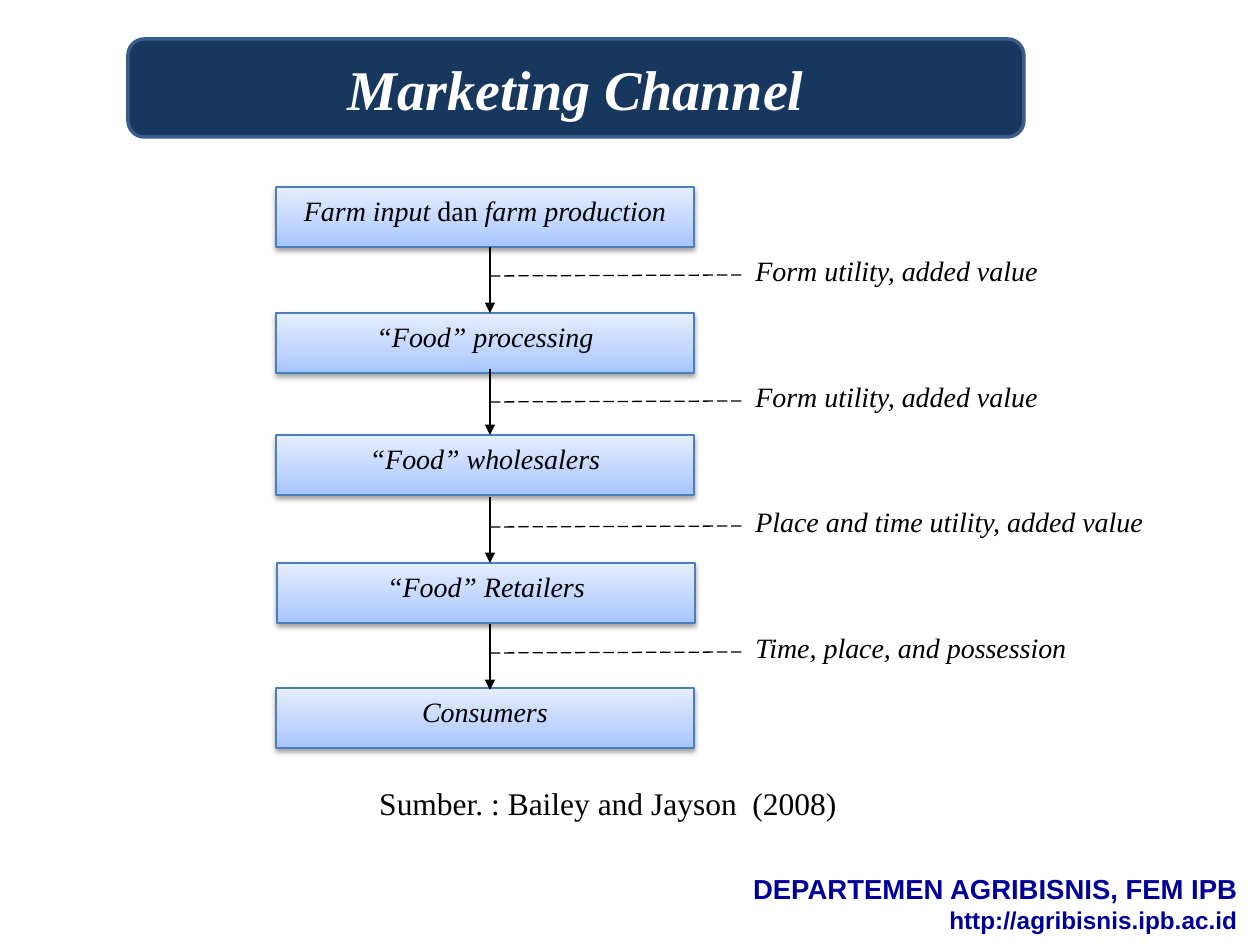
from copy import deepcopy

from lxml.etree import SubElement
from pptx import Presentation
from pptx.dml.color import RGBColor
from pptx.enum.dml import MSO_LINE
from pptx.enum.shapes import MSO_CONNECTOR, MSO_SHAPE
from pptx.enum.text import MSO_ANCHOR, PP_ALIGN
from pptx.oxml.ns import qn
from pptx.util import Emu, Pt

COLORS = {
    "ink": "000000",
    "white": "FFFFFF",
    "navy": "17375E",
    "navy_edge": "385D8A",
    "box_edge": "4B7EBC",
    "footer": "000099",
}
BOX_GRADIENT = [(0, "A4C4FF"), (0.35, "BFD4FF"), (1, "E6EEFF")]
SERIF, SANS = "Times New Roman", "Arial"
BOX_WIDTH, BOX_HEIGHT = 418, 60
ARROW_X, ARROW_LENGTH = 490, 66
NOTE_X = 743

STAGES = [
    (276, 187, [("Farm input", True), (" dan ", False), ("farm production", True)]),
    (276, 313, [("“Food” processing", True)]),
    (276, 435, [("“Food” wholesalers", True)]),
    (277, 563, [("“Food” Retailers", True)]),
    (276, 688, [("Consumers", True)]),
]
ARROW_TOPS = [247, 369, 497, 624]
NOTES = [
    (247, "Form utility, added value"),
    (373, "Form utility, added value"),
    (498, "Place and time utility, added value"),
    (624, "Time, place, and possession"),
]


def px(value):
    return Emu(round(value * 914400 / 126))


def rgb(name):
    return RGBColor.from_string(COLORS[name])


class ChannelSlide:
    """Draws the marketing channel elements on one slide in a shared style."""

    def __init__(self, slide):
        self.slide = slide

    def add_text_run(self, paragraph, text, size, color="ink", font=SERIF, bold=False, italic=False):
        run = paragraph.add_run()
        run.text = text
        run.font.name = font
        run.font.size = Pt(size)
        run.font.bold = bold
        run.font.italic = italic
        run.font.color.rgb = rgb(color)

    def shape(self, kind, left, top, width, height, edge, weight=0.75, fill=None):
        shape = self.slide.shapes.add_shape(kind, px(left), px(top), px(width), px(height))
        if fill:
            shape.fill.solid()
            shape.fill.fore_color.rgb = rgb(fill)
        shape.line.color.rgb = rgb(edge)
        shape.line.width = Pt(weight)
        shape.shadow.inherit = False
        shape.text_frame.word_wrap = True
        return shape

    def title(self, text):
        shape = self.shape(MSO_SHAPE.ROUNDED_RECTANGLE, 128, 39, 896, 98, "navy_edge", 2, "navy")
        shape.text_frame.vertical_anchor = MSO_ANCHOR.MIDDLE
        paragraph = shape.text_frame.paragraphs[0]
        paragraph.alignment = PP_ALIGN.CENTER
        self.add_text_run(paragraph, text, 32, "white", bold=True, italic=True)

    def label(self, shape, runs, alignment):
        shape.text_frame.vertical_anchor = MSO_ANCHOR.TOP
        paragraph = shape.text_frame.paragraphs[0]
        paragraph.alignment = alignment
        paragraph.space_after = Pt(10)
        for text, italic in runs:
            self.add_text_run(paragraph, text, 16, italic=italic)

    def stage(self, left, top, runs):
        shape = self.shape(MSO_SHAPE.RECTANGLE, left, top, BOX_WIDTH, BOX_HEIGHT, "box_edge")
        shape.fill.gradient()
        shape.fill.gradient_angle = 90
        properties = shape._element.spPr
        stops = properties.find(".//" + qn("a:gsLst"))
        stops.insert(1, deepcopy(stops[0]))
        for stop, (position, color) in zip(shape.fill.gradient_stops, BOX_GRADIENT):
            stop.position = position
            stop.color.rgb = RGBColor.from_string(color)
        shadow = SubElement(properties.find(qn("a:effectLst")), qn("a:outerShdw"),
                            blurRad=str(Pt(3.1)), dist=str(Pt(1.6)), dir="5400000", rotWithShape="0")
        color = SubElement(shadow, qn("a:srgbClr"), val=COLORS["ink"])
        SubElement(color, qn("a:alpha"), val="38000")
        self.label(shape, runs, PP_ALIGN.CENTER)

    def note(self, top, text):
        self.line(ARROW_X, top + 29, NOTE_X, top + 28).line.dash_style = MSO_LINE.LONG_DASH
        shape = self.shape(MSO_SHAPE.RECTANGLE, NOTE_X, top, BOX_WIDTH, BOX_HEIGHT, "white", fill="white")
        self.label(shape, [(text, True)], PP_ALIGN.LEFT)

    def line(self, x1, y1, x2, y2):
        connector = self.slide.shapes.add_connector(
            MSO_CONNECTOR.STRAIGHT, px(x1), px(y1), px(x2), px(y2))
        connector.line.color.rgb = rgb("ink")
        connector.line.width = Pt(0.75)
        SubElement(connector._element.spPr, qn("a:effectLst"))
        return connector

    def arrow(self, top):
        connector = self.line(ARROW_X, top, ARROW_X, top + ARROW_LENGTH)
        outline = connector._element.spPr.find(qn("a:ln"))
        SubElement(outline, qn("a:tailEnd"), type="triangle")

    def text(self, left, top, width, height, lines, alignment, wrap=True, **style):
        box = self.slide.shapes.add_textbox(px(left), px(top), px(width), px(height))
        frame = box.text_frame
        frame.word_wrap = wrap
        frame.vertical_anchor = MSO_ANCHOR.MIDDLE
        for index, (text, size) in enumerate(lines):
            paragraph = frame.add_paragraph() if index else frame.paragraphs[0]
            paragraph.alignment = alignment
            self.add_text_run(paragraph, text, size, **style)


def main():
    presentation = Presentation()
    presentation.slide_width, presentation.slide_height = px(1260), px(945)
    channel = ChannelSlide(presentation.slides.add_slide(presentation.slide_layouts[6]))
    channel.text(116, 872, 1134, 63,
                 [("DEPARTEMEN AGRIBISNIS, FEM IPB", 15.7), ("http://agribisnis.ipb.ac.id", 13.9)],
                 PP_ALIGN.RIGHT, color="footer", font=SANS, bold=True)
    for left, top, runs in STAGES:
        channel.stage(left, top, runs)
    for top in ARROW_TOPS:
        channel.arrow(top)
    for top, text in NOTES:
        channel.note(top, text)
    channel.text(364, 778, 488, 50, [("Sumber. : Bailey and Jayson  (2008)", 18)],
                 PP_ALIGN.CENTER, wrap=False)
    channel.title("Marketing Channel")
    presentation.save("out.pptx")


if __name__ == "__main__":
    main()
